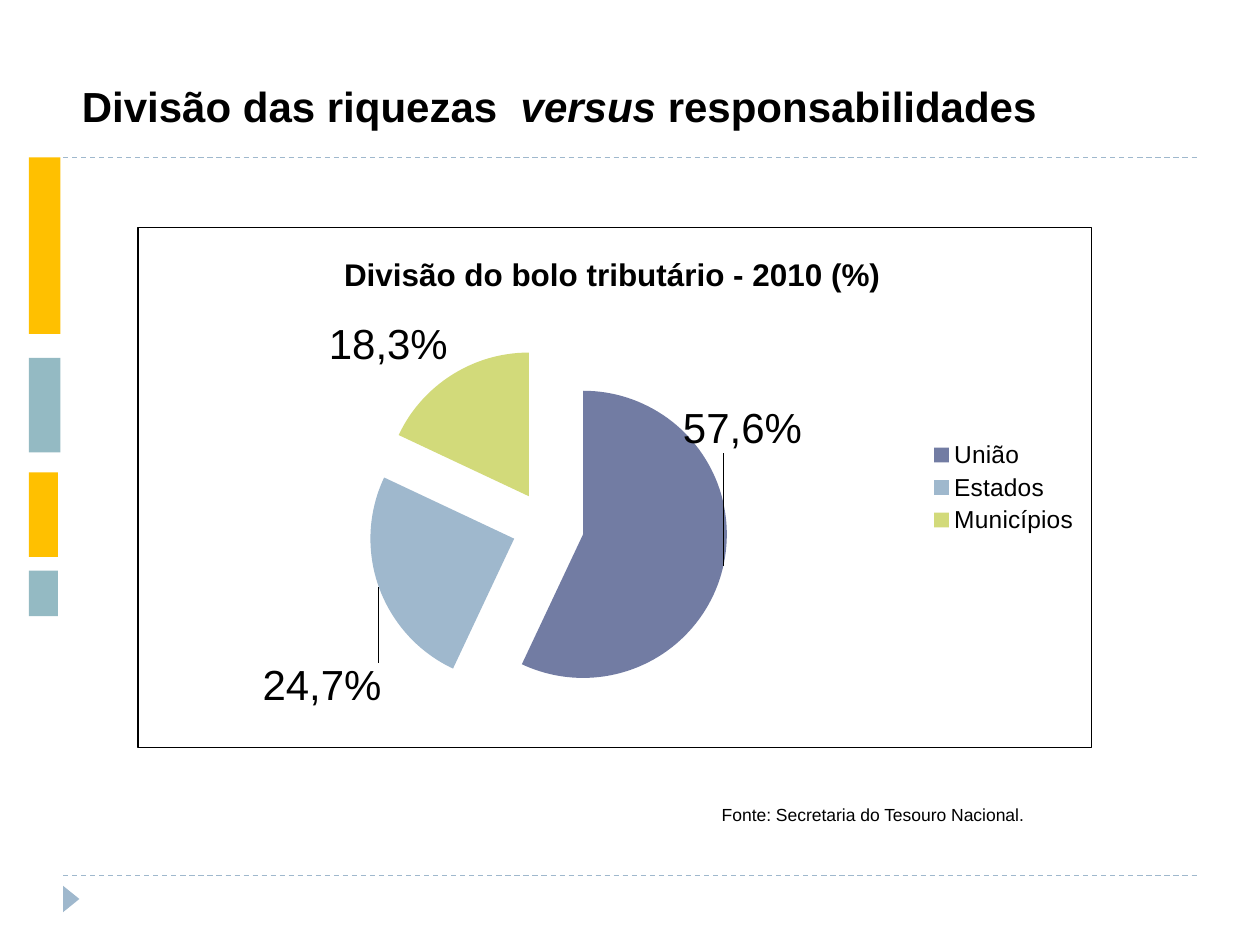
"""Build the slide on how tax revenue is divided, with an exploded pie chart."""
from lxml.etree import SubElement
from pptx import Presentation
from pptx.chart.data import CategoryChartData
from pptx.dml.color import RGBColor
from pptx.enum.chart import XL_CHART_TYPE, XL_LABEL_POSITION, XL_LEGEND_POSITION
from pptx.enum.dml import MSO_LINE
from pptx.enum.shapes import MSO_CONNECTOR, MSO_SHAPE
from pptx.enum.text import MSO_ANCHOR, PP_ALIGN
from pptx.oxml import parse_xml
from pptx.oxml.ns import nsdecls, qn
from pptx.util import Inches, Pt

COLORS = {
    "text": "000000",
    "gold": "FFC000",
    "teal": "94BAC3",
    "blue": "9FB8CD",
    "indigo": "727CA3",
    "lime": "D2DA7A",
}
RGB = {name: RGBColor.from_string(value) for name, value in COLORS.items()}

presentation = Presentation()
presentation.slide_width, presentation.slide_height = Inches(10), Inches(7.5)
COLUMN = presentation.slide_width / 100
ROW = presentation.slide_height / 75
slide = presentation.slides.add_slide(presentation.slide_layouts[5])


def area(left, top, width, height):
    return [int(size) for size in (left * COLUMN, top * ROW, width * COLUMN, height * ROW)]


def set_layout(parent, index, target=None, **shares):
    for existing in parent.findall(qn("c:layout")):
        parent.remove(existing)
    layout = parse_xml(f"<c:layout {nsdecls('c')}><c:manualLayout/></c:layout>")
    parent.insert(index, layout)
    if target:
        SubElement(layout[0], qn("c:layoutTarget")).set("val", target)
        for mode in ("xMode", "yMode"):
            SubElement(layout[0], qn(f"c:{mode}")).set("val", "edge")
    for name, share in shares.items():
        SubElement(layout[0], qn(f"c:{name}")).set("val", str(share))


for row in (69.5, 12.5):
    left, top, width, height = area(5, row, 90, 0)
    rule = slide.shapes.add_connector(MSO_CONNECTOR.STRAIGHT, left, top, left + width, top)
    rule.line.color.rgb = RGB["blue"]
    rule.line.width = Pt(0.75)
    rule.line.dash_style = MSO_LINE.DASH
    SubElement(rule.element.spPr, qn("a:effectLst"))

ornaments = [
    (MSO_SHAPE.ISOSCELES_TRIANGLE, (4.6, 70.7, 2.1, 1.3), "blue", 90),
    (MSO_SHAPE.RECTANGLE, (2.3, 12.5, 2.5, 14), "gold", 0),
    (MSO_SHAPE.RECTANGLE, (2.3, 28.4, 2.5, 7.5), "teal", 0),
    (MSO_SHAPE.RECTANGLE, (2.3, 37.5, 2.3, 6.7), "gold", 0),
    (MSO_SHAPE.RECTANGLE, (2.3, 45.3, 2.3, 3.6), "teal", 0),
]
for kind, cells, color, rotation in ornaments:
    shape = slide.shapes.add_shape(kind, *area(*cells))
    shape.shadow.inherit = False
    shape.fill.solid()
    shape.fill.fore_color.rgb = RGB[color]
    shape.line.fill.background()
    shape.rotation = rotation

source = slide.shapes.add_textbox(*area(56.3, 63.3, 27.3, 2.7))
source.text_frame.word_wrap = True
source.text_frame.vertical_anchor = MSO_ANCHOR.MIDDLE
paragraph = source.text_frame.paragraphs[0]
paragraph.alignment = PP_ALIGN.JUSTIFY
run = paragraph.add_run()
run.text = "Fonte: Secretaria do Tesouro Nacional."
run.font.size, run.font.name = Pt(10), "Arial"
run.font.color.rgb = RGB["text"]

shares = [
    ("União", 57, "57,6%", "indigo", {"x": -0.05, "y": -0.31}),
    ("Estados", 25, "24,7%", "blue", {"x": 0.01, "y": 0.14}),
    ("Municípios", 18, "18,3%", "lime", None),
]
chart_data = CategoryChartData()
chart_data.categories = [share[0] for share in shares]
chart_data.add_series("Series 1", [share[1] for share in shares])
chart = slide.shapes.add_chart(XL_CHART_TYPE.PIE, *area(10.9, 18, 75.8, 41.4), chart_data).chart
chart.font.size, chart.font.name = Pt(10), "Courier New"
chart.font.color.rgb = RGB["text"]
chart.element.find(qn("c:chart")).addnext(parse_xml(
    f'<c:spPr {nsdecls("c", "a")}><a:noFill/><a:ln w="{Pt(0.75)}"><a:solidFill>'
    f'<a:srgbClr val="{COLORS["text"]}"/></a:solidFill></a:ln></c:spPr>'))
set_layout(chart.element.xpath("c:chart/c:plotArea")[0], 0, "inner", x=0.24, y=0.23, w=0.38, h=0.69)

chart.has_title = True
run = chart.chart_title.text_frame.paragraphs[0].add_run()
run.text = "Divisão do bolo tributário - 2010 (%)"
run.font.size, run.font.name, run.font.bold = Pt(18), "Arial", True
run.font.color.rgb = RGB["text"]
set_layout(chart.element.xpath("c:chart/c:title")[0], 1, "inner", x=0.21, y=0.04)

chart.has_legend = True
chart.legend.position = XL_LEGEND_POSITION.RIGHT
chart.legend.include_in_layout = False
chart.legend.font.size, chart.legend.font.name = Pt(14), "Arial"
chart.legend.font.color.rgb = RGB["text"]

plot = chart.plots[0]
plot.vary_by_categories = True
series = plot.series[0]
chart.element.xpath(".//c:ser/c:tx")[0].addnext(
    parse_xml(f'<c:explosion {nsdecls("c")} val="25"/>'))
labels = series.data_labels
labels.show_percentage, labels.show_value = True, False
labels.position = XL_LABEL_POSITION.OUTSIDE_END
labels.font.size, labels.font.name = Pt(24), "Arial"
for index, (category, value, caption, color, offset) in enumerate(shares):
    point = series.points[index]
    point.format.fill.solid()
    point.format.fill.fore_color.rgb = RGB[color]
    point.format.line.fill.background()
    run = point.data_label.text_frame.paragraphs[0].add_run()
    run.text = caption
    run.font.size, run.font.name = Pt(24), "Arial"
    run.font.color.rgb = RGB["text"]
    point.data_label.position = XL_LABEL_POSITION.OUTSIDE_END
    if offset:
        set_layout(chart.element.xpath(".//c:dLbl")[index], 1, **offset)

title = slide.shapes.title
title.left, title.top, title.width, title.height = area(5.5, 6.2, 88.3, 4.8)
title.text_frame.word_wrap = True
title.text_frame.vertical_anchor = MSO_ANCHOR.MIDDLE
paragraph = title.text_frame.paragraphs[0]
paragraph.alignment = PP_ALIGN.LEFT
paragraph.line_spacing = 0.93
for text, italic in (("Divisão das riquezas ", False), (" versus", True), (" responsabilidades", False)):
    run = paragraph.add_run()
    run.text = text
    run.font.size, run.font.name = Pt(24), "Arial"
    run.font.bold, run.font.italic = True, italic
    run.font.color.rgb = RGB["text"]

presentation.save("out.pptx")
